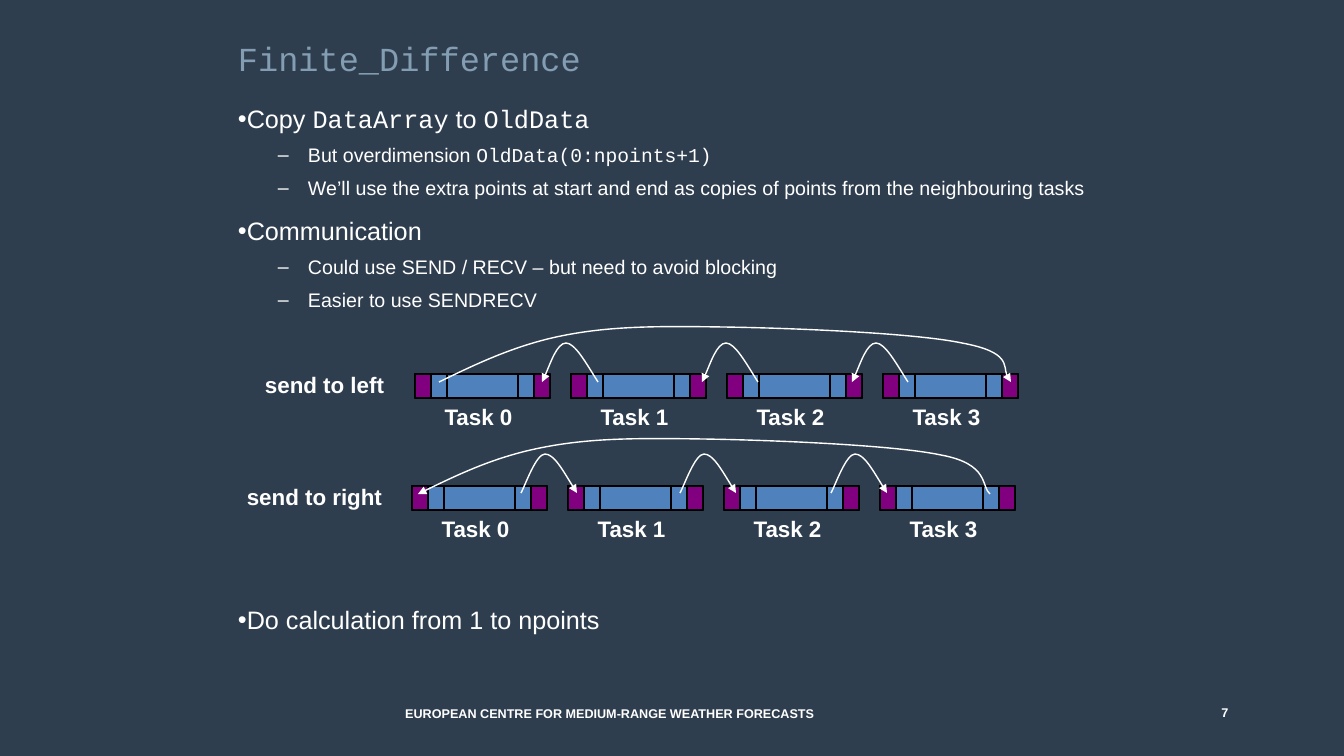
from lxml import etree
from pptx import Presentation
from pptx.dml.color import RGBColor
from pptx.enum.shapes import MSO_CONNECTOR, MSO_SHAPE
from pptx.enum.text import MSO_ANCHOR, MSO_AUTO_SIZE, PP_ALIGN
from pptx.oxml.ns import qn
from pptx.util import Emu, Pt

EMU_PER_PX = 914400 / 100.8
NAVY = RGBColor(0x2F, 0x3E, 0x4F)
STEEL = RGBColor(0x83, 0x9D, 0xB2)
WHITE = RGBColor(0xFF, 0xFF, 0xFF)
BLACK = RGBColor(0, 0, 0)
BLUE = RGBColor(0x4F, 0x81, 0xBD)
PURPLE = RGBColor(0x80, 0, 0x80)
SANS, MONO = "Arial", "Courier New"
LEFT, CENTER, RIGHT = PP_ALIGN.LEFT, PP_ALIGN.CENTER, PP_ALIGN.RIGHT
TOP, BOTTOM = MSO_ANCHOR.TOP, MSO_ANCHOR.BOTTOM
NO_AUTOFIT = MSO_AUTO_SIZE.NONE
RECTANGLE = MSO_SHAPE.RECTANGLE
STRAIGHT = MSO_CONNECTOR.STRAIGHT

STRIP_WIDTH, STRIP_HEIGHT, CELL, STRIP_PITCH = 135, 24, 16, 156
HOP = [(56, 39), (44, 20), (33, 0), (24, 0), (15, 0), (4, 32), (0, 39)]
WRAPAROUND = [(0, 56), (39, 37), (79, 18), (127, 9), (174, 0), (220, 0), (285, 1),
              (352, 2), (476, 7), (523, 17), (572, 26), (563, 49), (572, 56)]

BULLETS = [
    (0, 0, [("Copy ", SANS), ("DataArray", MONO), (" to ", SANS), ("OldData", MONO)]),
    (1, 10, [("But overdimension ", SANS), ("OldData(0:npoints+1)", MONO)]),
    (1, 10, [("We’ll use the extra points at start and end as copies of points "
              "from the neighbouring tasks", SANS)]),
    (0, 11, [("Communication", SANS)]),
    (1, 10, [("Could use SEND / RECV – but need to avoid blocking", SANS)]),
    (1, 10, [("Easier to use SENDRECV", SANS)]),
    (0, 209, [("Do calculation from 1 to npoints", SANS)]),
]


def px(length):
    return Emu(round(length * EMU_PER_PX))


def write(paragraph, text, size=16, font=SANS, color=WHITE, bold=False, align=LEFT):
    paragraph.alignment = align
    run = paragraph.add_run()
    run.text = text
    run.font.size = Pt(size)
    run.font.name = font
    run.font.color.rgb = color
    run.font.bold = bold


def place(holder, left, top, width, height):
    holder.left, holder.top = px(left), px(top)
    holder.width, holder.height = px(width), px(height)


def trim(frame, anchor):
    frame.margin_left = frame.margin_right = 0
    frame.margin_top = frame.margin_bottom = 0
    frame.vertical_anchor = anchor
    frame.auto_size = NO_AUTOFIT


def add_label(shapes, text, left, top, width, height, **style):
    label = shapes.add_textbox(px(left), px(top), px(width), px(height))
    label.text_frame.word_wrap = True
    write(label.text_frame.paragraphs[0], text, bold=True, **style)
    return label


def add_bullet(paragraph, level, space, pieces):
    margin, indent, mark = [(0, -20, "•"), (70, -30, "–")][level]
    paragraph.level = level
    properties = paragraph._p.get_or_add_pPr()
    properties.set("marL", str(px(margin)))
    properties.set("indent", str(px(indent)))
    color = etree.SubElement(properties, qn("a:buClr"))
    etree.SubElement(color, qn("a:srgbClr"), val=str(WHITE))
    etree.SubElement(properties, qn("a:buFont"), typeface=SANS)
    etree.SubElement(properties, qn("a:buChar"), char=mark)
    paragraph.line_spacing = 0.8 if level else Pt(22)
    paragraph.space_before = Pt(space)
    for text, font in pieces:
        write(paragraph, text, size=14 if level else 18, font=font)


def add_cell(shapes, left, top, width, fill):
    cell = shapes.add_shape(RECTANGLE, px(left), px(top), px(width), px(STRIP_HEIGHT))
    cell.shadow.inherit = False
    cell.fill.solid()
    cell.fill.fore_color.rgb = fill
    cell.line.color.rgb = BLACK
    cell.line.width = Pt(1)


def add_divider(shapes, x, top):
    divider = shapes.add_connector(STRAIGHT, px(x), px(top), px(x), px(top + STRIP_HEIGHT))
    divider.line.color.rgb = BLACK
    divider.line.width = Pt(1)
    etree.SubElement(divider.element.spPr, qn("a:effectLst"))


def add_task(slide, name, left, top):
    shapes = slide.shapes.add_group_shape().shapes
    last = STRIP_WIDTH - CELL
    add_cell(shapes, left, top, STRIP_WIDTH, BLUE)
    for offset in (CELL, 2 * CELL, last - CELL, last):
        add_divider(shapes, left + offset, top)
    add_label(shapes, name, left, top + STRIP_HEIGHT, 127, 37, align=CENTER)
    for offset in (0, last):
        add_cell(shapes, left + offset, top, CELL, PURPLE)


def add_curve(slide, points, left, top, arrow_end):
    start, *controls = [(px(left + x), px(top + y)) for x, y in points]
    builder = slide.shapes.build_freeform(*start)
    builder.add_line_segments(controls, close=False)
    curve = builder.convert_to_shape()
    curve.shadow.inherit = False
    curve.fill.background()
    curve.line.color.rgb = WHITE
    curve.line.width = Pt(1)
    properties = curve.element.spPr
    etree.SubElement(properties.find(qn("a:ln")), qn(arrow_end), type="triangle")
    outline = properties.find(".//" + qn("a:path"))
    segments = outline.findall(qn("a:lnTo"))
    for first in range(0, len(segments), 3):
        bezier = etree.SubElement(outline, qn("a:cubicBezTo"))
        for segment in segments[first:first + 3]:
            bezier.append(segment[0])
            outline.remove(segment)


def add_exchange(slide, caption, caption_at, strip_at, hop_lefts, hop_top, wrap_at, arrow_end):
    left, top = strip_at
    for task in range(4):
        add_task(slide, f"Task {task}", left + task * STRIP_PITCH, top)
    for hop_left in hop_lefts:
        add_curve(slide, HOP, hop_left, hop_top, arrow_end)
    add_curve(slide, WRAPAROUND, *wrap_at, arrow_end)
    add_label(slide.shapes, caption, *caption_at, 215, 37, align=RIGHT)


def main():
    deck = Presentation()
    deck.slide_width, deck.slide_height = px(1344), px(756)
    slide = deck.slides.add_slide(deck.slide_layouts[1])
    slide.background.fill.solid()
    slide.background.fill.fore_color.rgb = NAVY

    title, body = slide.placeholders
    place(title, 238, 39, 868, 40)
    trim(title.text_frame, TOP)
    heading = title.text_frame.paragraphs[0]
    heading.line_spacing = Pt(28)
    write(heading, "Finite_Difference", size=24, font=MONO, color=STEEL)

    place(body, 238, 103, 868, 549)
    frame = body.text_frame
    trim(frame, TOP)
    for index, bullet in enumerate(BULLETS):
        add_bullet(frame.add_paragraph() if index else frame.paragraphs[0], *bullet)

    for text, box in (("7", (1106, 696, 238, 24)),
                      ("EUROPEAN CENTRE FOR MEDIUM-RANGE WEATHER FORECASTS",
                       (386, 696, 447, 25))):
        footer = add_label(slide.shapes, text, *box, size=9, align=CENTER)
        trim(footer.text_frame, BOTTOM)

    add_exchange(slide, "send to left", (179, 366), (415, 374),
                 (542, 702, 852), 343, (439, 326), "a:tailEnd")
    add_exchange(slide, "send to right", (177, 478), (412, 486),
                 (521, 680, 831), 454, (418, 438), "a:headEnd")
    deck.save("out.pptx")


if __name__ == "__main__":
    main()
